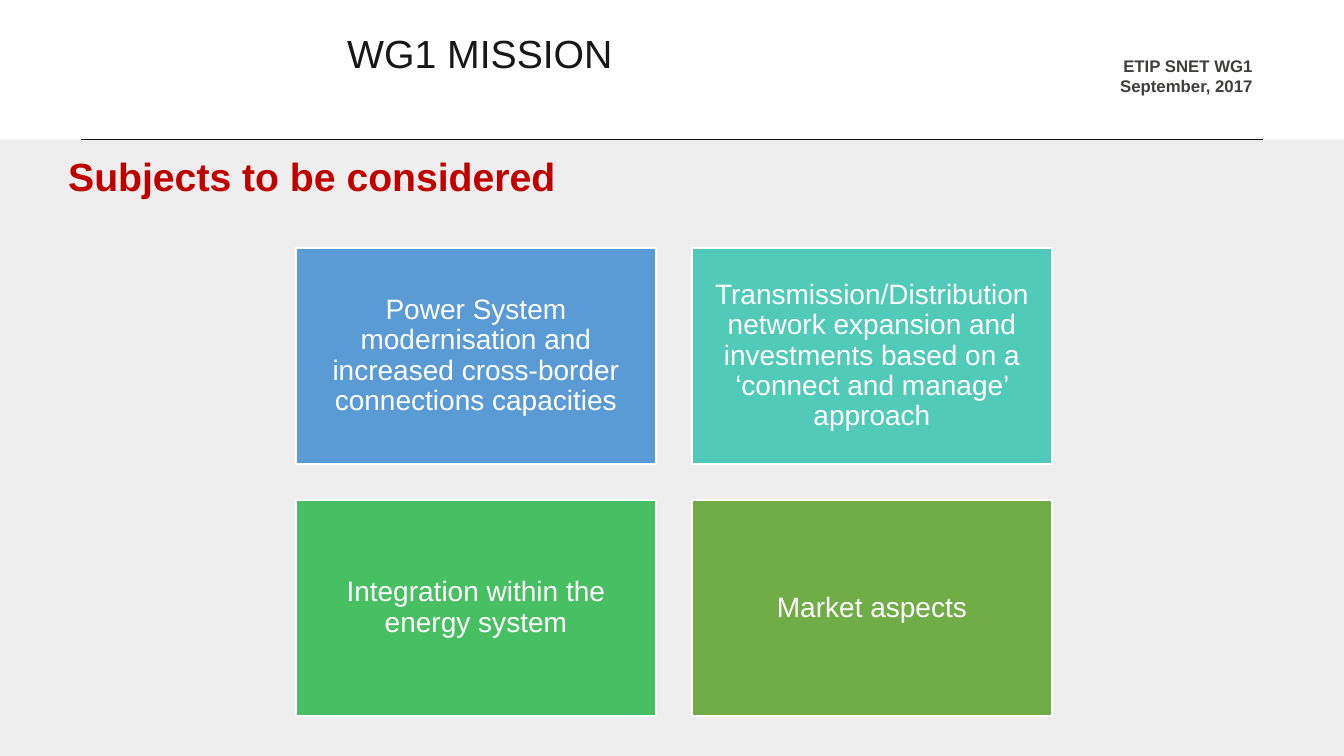
from dataclasses import dataclass

from lxml.etree import SubElement
from pptx import Presentation
from pptx.dml.color import RGBColor
from pptx.enum.shapes import MSO_CONNECTOR, MSO_SHAPE
from pptx.enum.text import MSO_ANCHOR, PP_ALIGN
from pptx.oxml.ns import qn
from pptx.util import Cm, Pt


@dataclass(frozen=True)
class Theme:
    font: str = "Arial"
    background: str = "EDEEED"
    white: str = "FFFFFF"
    rule: str = "181717"
    title: str = "181616"
    event: str = "3F3F3D"
    heading: str = "C00000"
    title_size: int = 28
    subject_size: int = 20
    event_size: int = 12


@dataclass(frozen=True)
class Box:
    left: float
    top: float
    width: float
    height: float

    def lengths(self) -> tuple:
        return Cm(self.left), Cm(self.top), Cm(self.width), Cm(self.height)


@dataclass(frozen=True)
class Label:
    lines: tuple
    box: Box
    size: int
    color: str
    bold: bool = False
    align: PP_ALIGN = PP_ALIGN.LEFT
    spacing: float = 1.0


@dataclass(frozen=True)
class Subject:
    text: str
    color: str


THEME = Theme()

LABELS = (
    Label(("ETIP SNET WG1", "September, 2017"), Box(18.64, 1.27, 13.18, 1.27),
          THEME.event_size, THEME.event, bold=True, align=PP_ALIGN.RIGHT),
    Label(("Subjects to be considered",), Box(1.47, 3.71, 31.19, 1.4),
          THEME.title_size, THEME.heading, bold=True),
    Label(("WG1 MISSION",), Box(8.5, 0.76, 18.77, 1.93),
          THEME.title_size, THEME.title, spacing=0.9),
)

SUBJECTS = (
    Subject("Power System modernisation and increased cross-border "
            "connections capacities", "5B9BD5"),
    Subject("Transmission/Distribution network expansion and investments "
            "based on a ‘connect and manage’ approach", "52CAB8"),
    Subject("Integration within the energy system", "49BF64"),
    Subject("Market aspects", "70AD47"),
)
COLUMNS = 2
FIRST_TILE = Box(7.46, 6.25, 9.07, 5.44)
TILE_GAP = 0.91


def rgb(color: str) -> RGBColor:
    return RGBColor.from_string(color)


def write(frame, lines: tuple, size: int, color: str, bold: bool,
          align: PP_ALIGN, spacing: float) -> None:
    frame.word_wrap = True
    frame.text = "\n".join(lines)
    for paragraph in frame.paragraphs:
        paragraph.alignment = align
        paragraph.line_spacing = spacing
        font_values = {"name": THEME.font, "size": Pt(size), "bold": bold}
        for attribute, value in font_values.items():
            setattr(paragraph.font, attribute, value)
        paragraph.font.color.rgb = rgb(color)


def add_rectangle(slide, box: Box, color: str):
    rectangle = slide.shapes.add_shape(MSO_SHAPE.RECTANGLE, *box.lengths())
    rectangle.shadow.inherit = False
    rectangle.fill.solid()
    rectangle.fill.fore_color.rgb = rgb(color)
    rectangle.line.fill.background()
    return rectangle


def add_label(slide, label: Label) -> None:
    frame = slide.shapes.add_textbox(*label.box.lengths()).text_frame
    write(frame, label.lines, label.size, label.color, label.bold,
          label.align, label.spacing)


def add_subject(slide, index: int, subject: Subject) -> None:
    row, column = divmod(index, COLUMNS)
    box = Box(FIRST_TILE.left + column * (FIRST_TILE.width + TILE_GAP),
              FIRST_TILE.top + row * (FIRST_TILE.height + TILE_GAP),
              FIRST_TILE.width, FIRST_TILE.height)
    tile = add_rectangle(slide, box, subject.color)
    tile.line.color.rgb = rgb(THEME.white)
    tile.line.width = Pt(1)
    frame = tile.text_frame
    frame.vertical_anchor = MSO_ANCHOR.MIDDLE
    for side in ("left", "top", "right", "bottom"):
        setattr(frame, f"margin_{side}", Cm(0.21))
    write(frame, (subject.text,), THEME.subject_size, THEME.white, False,
          PP_ALIGN.CENTER, 0.9)


def add_header(slide) -> None:
    add_rectangle(slide, Box(0, 0, 33.87, 3.52), THEME.white)
    rule = slide.shapes.add_connector(MSO_CONNECTOR.STRAIGHT, Cm(2.03),
                                      Cm(3.52), Cm(31.83), Cm(3.52))
    rule.line.color.rgb = rgb(THEME.rule)
    rule.line.width = Pt(0.5)
    SubElement(rule.element.spPr, qn("a:effectLst"))


def main() -> None:
    presentation = Presentation()
    presentation.slide_width, presentation.slide_height = Cm(33.87), Cm(19.05)
    slide = presentation.slides.add_slide(presentation.slide_layouts[6])
    slide.background.fill.solid()
    slide.background.fill.fore_color.rgb = rgb(THEME.background)

    # White header band with its rule
    add_header(slide)

    # Grid of subjects
    for index, subject in enumerate(SUBJECTS):
        add_subject(slide, index, subject)

    # Event, heading and title
    for label in LABELS:
        add_label(slide, label)

    presentation.save("out.pptx")


if __name__ == "__main__":
    main()
